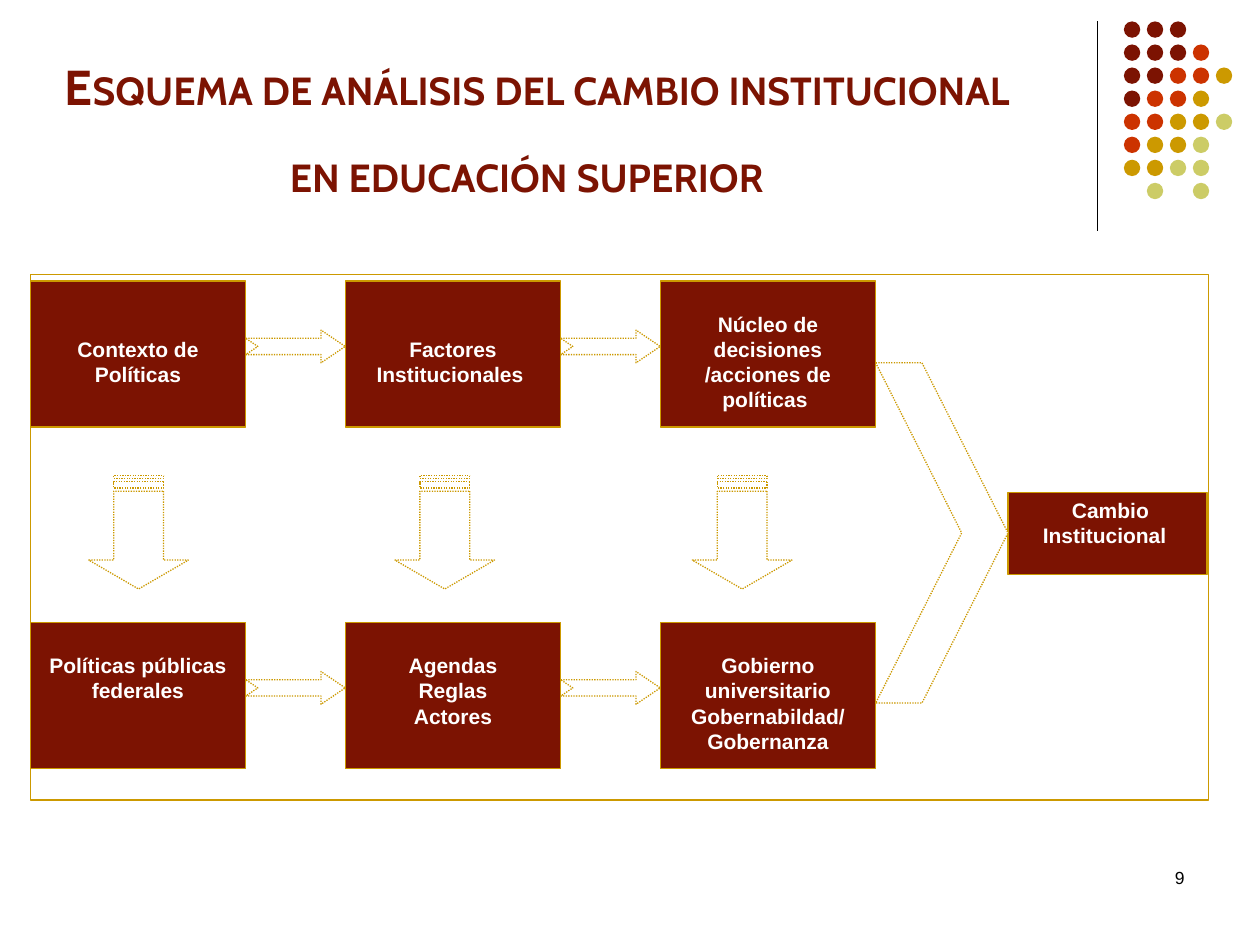
"""Build the slide on the analysis of institutional change in higher education."""
from pptx import Presentation
from pptx.dml.color import RGBColor
from pptx.enum.dml import MSO_LINE
from pptx.enum.shapes import MSO_CONNECTOR, MSO_SHAPE
from pptx.enum.text import MSO_ANCHOR, MSO_AUTO_SIZE, PP_ALIGN
from pptx.oxml.ns import qn
from pptx.util import Inches, Pt

RECT, OVAL = MSO_SHAPE.RECTANGLE, MSO_SHAPE.OVAL
NOTCHED, STRIPED = MSO_SHAPE.NOTCHED_RIGHT_ARROW, MSO_SHAPE.STRIPED_RIGHT_ARROW
CHEVRON, LINE = MSO_SHAPE.CHEVRON, MSO_CONNECTOR.STRAIGHT
DOTTED = MSO_LINE.ROUND_DOT
CENTER, RIGHT = PP_ALIGN.CENTER, PP_ALIGN.RIGHT
TOP, BOTTOM = MSO_ANCHOR.TOP, MSO_ANCHOR.BOTTOM

THEME = {
    "red": "7C1302", "orange": "CC3300", "gold": "CC9900", "lime": "CCCC66",
    "white": "FFFFFF", "black": "000000",
    "font": "Arial", "head": "Cabin",
    "title": 28, "gap": 44, "body": 12, "note": 10, "lead": 14.4, "rule": 0.75,
}

TITLE = "Esquema de análisis del cambio institucional en educación superior"
STAGES = [
    [(2, ["Contexto de Políticas"]),
     (2, ["Factores Institucionales "]),
     (1, ["Núcleo de decisiones /acciones de políticas "])],
    [(1, ["Políticas públicas federales"]),
     (1, ["Agendas", "Reglas", "Actores"]),
     (1, ["Gobierno universitario", "Gobernabildad/ Gobernanza"])],
]
RESULT = [" Cambio Institucional "]
PAGE = "9"
DOTS = ["RRR", "RRRO", "RROOG", "ROOG", "OOGGL", "OGGL", "GGLL", " L L"]
INKS = {"R": "red", "O": "orange", "G": "gold", "L": "lime"}

LEFT, STEP, WIDE, HIGH = 0.24, 2.5, 1.71, 1.16
ROWS = [2.23, 4.94]
DOWN = [1.1, 3.53, 5.89]


def ink(name):
    return RGBColor.from_string(THEME[name])


def style(run, size, color, font="font", bold=False):
    run.font.size = Pt(THEME[size])
    run.font.color.rgb = ink(color)
    run.font.name = THEME[font]
    run.font.bold = bold


def draw(slide, kind, x, y, w, h, fill=None, line=None, dash=None, adj=()):
    shape = slide.shapes.add_shape(kind, Inches(x), Inches(y), Inches(w), Inches(h))
    shape.shadow.inherit = False
    if fill:
        shape.fill.solid()
        shape.fill.fore_color.rgb = ink(fill)
    else:
        shape.fill.background()
    if line:
        shape.line.color.rgb = ink(line)
        shape.line.width = Pt(THEME["rule"])
        if dash:
            shape.line.dash_style = dash
    else:
        shape.line.fill.background()
    for i, value in enumerate(adj):
        shape.adjustments[i] = value
    return shape


def arrow(slide, kind, x, y, w, h, adj):
    return draw(slide, kind, x, y, w, h, "white", "gold", DOTTED, adj)


def panel(slide, x, y, w, h, lines, skip=0):
    frame = draw(slide, RECT, x, y, w, h, "red", "gold").text_frame
    frame.word_wrap = True
    frame.vertical_anchor = TOP
    frame.margin_left = frame.margin_right = Inches(0.08)
    frame.margin_top = Inches(0.04 + skip * THEME["lead"] / 72)
    frame.margin_bottom = Inches(0.04)
    frame.text = "\n".join(lines)
    for para in frame.paragraphs:
        para.alignment = CENTER
        para.line_spacing = Pt(THEME["lead"])
        for run in para.runs:
            style(run, "body", "white", bold=True)


def add_title(slide):
    title = slide.shapes.title
    title.left, title.top = Inches(0.27), Inches(0.44)
    title.width, title.height = Inches(7.99), Inches(1.26)
    frame = title.text_frame
    frame.word_wrap = True
    frame.auto_size = MSO_AUTO_SIZE.NONE
    frame.vertical_anchor = BOTTOM
    frame.text = TITLE
    para = frame.paragraphs[0]
    para.alignment = CENTER
    run = para.runs[0]
    style(run, "title", "red", "head", True)
    run.font._element.set("cap", "small")
    tail = para.add_run()
    tail.text = " "
    style(tail, "gap", "red")


def add_dots(slide):
    rule = slide.shapes.add_connector(
        LINE, Inches(8.71), Inches(0.17), Inches(8.71), Inches(1.83))
    rule.line.color.rgb = ink("black")
    rule.line.width = Pt(THEME["rule"])
    props = rule._element.spPr
    props.append(props.makeelement(qn("a:effectLst"), {}))
    for r, row in enumerate(DOTS):
        for c, key in enumerate(row):
            if key in INKS:
                draw(slide, OVAL, 8.92 + c * 0.1825, 0.17 + r * 0.183,
                     0.13, 0.13, INKS[key])


def add_scheme(slide):
    draw(slide, RECT, LEFT, 2.18, 9.35, 4.17, line="gold")
    gap = STEP - WIDE
    for y, row in zip(ROWS, STAGES):
        for col, (skip, lines) in enumerate(row):
            x = LEFT + col * STEP
            panel(slide, x, y, WIDE, HIGH, lines, skip)
            if col < len(row) - 1:
                arrow(slide, NOTCHED, x + WIDE, y + 0.39, gap, 0.26, (0.5, 0.74))
    panel(slide, 8, 3.91, 1.58, 0.65, RESULT)
    for mid in DOWN:
        arrow(slide, STRIPED, mid - 0.45, 3.83, 0.9, 0.79, (0.5, 0.29)).rotation = 90
    arrow(slide, CHEVRON, 6.95, 2.88, 1.05, 2.7, (0.65,))


def add_page(slide):
    box = slide.shapes.add_textbox(Inches(7.17), Inches(6.83), Inches(2.33), Inches(0.5))
    box.text_frame.word_wrap = True
    box.text_frame.text = PAGE
    para = box.text_frame.paragraphs[0]
    para.alignment = RIGHT
    style(para.runs[0], "note", "black")


def main():
    deck = Presentation()
    deck.slide_width, deck.slide_height = Inches(10), Inches(7.5)
    slide = deck.slides.add_slide(deck.slide_layouts[5])
    add_dots(slide)
    add_title(slide)
    add_scheme(slide)
    add_page(slide)
    deck.save("out.pptx")


if __name__ == "__main__":
    main()
